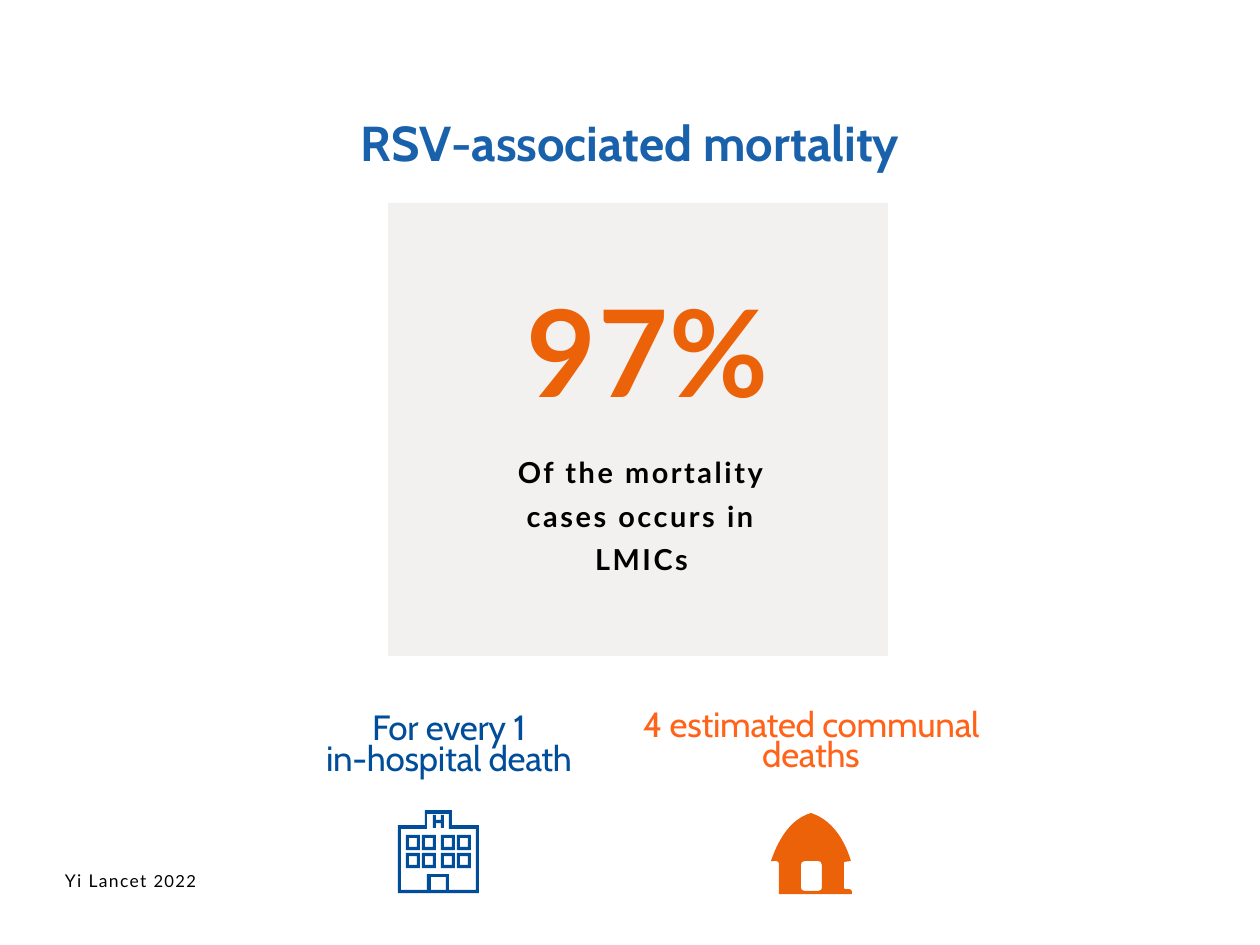
import pptx
import pptx.util
import pptx.dml.color
import pptx.enum.shapes
import pptx.enum.text
import pptx.oxml

SCALE = 914400 / 126  # EMU in one px
HUES = {
    "title": "1961AB", "panel": "D4D0CB", "ink": "000000",
    "rate": "EB6209", "home": "FF6319", "ward": "004D9A",
}
ALIGN = pptx.enum.text.PP_ALIGN
FIT = pptx.enum.text.MSO_AUTO_SIZE


def emu(px):
    return round(px * SCALE)


def hue(name):
    return pptx.dml.color.RGBColor.from_string(HUES[name])


def paint(shape, name):
    shape.shadow.inherit = False
    shape.fill.solid()
    shape.fill.fore_color.rgb = hue(name)
    shape.line.fill.background()


def place(shape, box):
    shape.left, shape.top, shape.width, shape.height = map(emu, box)


def write(shape, paras, font, size, color, bold=False, gap=0, lead=None,
          before=0, align=ALIGN.CENTER, inset=(0, 0), fit=FIT.NONE):
    """Fill a shape; each paragraph is a list of (text, size or None)."""
    frame = shape.text_frame
    frame.word_wrap = True
    frame.auto_size = fit
    frame.vertical_anchor = pptx.enum.text.MSO_ANCHOR.TOP
    frame.margin_left = frame.margin_right = emu(inset[0])
    frame.margin_top, frame.margin_bottom = emu(inset[1]), 0
    for i, runs in enumerate(paras):
        para = frame.add_paragraph() if i else frame.paragraphs[0]
        para.alignment = align
        if lead:
            para.line_spacing = pptx.util.Pt(lead)
        if i and before:
            para.space_before = pptx.util.Pt(before)
        for text, own in runs:
            run = para.add_run()
            run.text = text
            run.font.name, run.font.bold = font, bold
            run.font.size = pptx.util.Pt(own or size)
            run.font.color.rgb = hue(color)
            run._r.get_or_add_rPr().set("spc", str(round(gap * 100)))


def label(slide, box, paras, **form):
    write(slide.shapes.add_textbox(*map(emu, box)), paras, **form)


def panel(slide, box):
    shape = slide.shapes.add_shape(
        pptx.enum.shapes.MSO_SHAPE.RECTANGLE, *map(emu, box))
    paint(shape, "panel")
    color = shape.fill._xPr.find(".//" + pptx.oxml.ns.qn("a:srgbClr"))
    alpha = color.makeelement(pptx.oxml.ns.qn("a:alpha"), {"val": "28000"})
    color.append(alpha)


def icon(slide, rings, color):
    """Draw closed rings as one shape; inner rings are holes."""
    pen = None
    for ring in rings:
        dots = [(emu(x), emu(y)) for x, y in ring]
        if pen is None:
            pen = slide.shapes.build_freeform(*dots[0], scale=1.0)
        else:
            pen.move_to(*dots[0])
        pen.add_line_segments(dots[1:], close=True)
    paint(pen.convert_to_shape(), color)


def rect(x, y, w, h):
    return [(x, y), (x + w, y), (x + w, y + h), (x, y + h)]


def curve(a, b, c, d, steps=12):
    """Points along a cubic curve, without its start."""
    dots = []
    for i in range(1, steps + 1):
        t = i / steps
        s = 1 - t
        mix = (s ** 3, 3 * s * s * t, 3 * s * t * t, t ** 3)
        dots.append(tuple(sum(m * p[k] for m, p in zip(mix, (a, b, c, d)))
                          for k in (0, 1)))
    return dots


def ward(slide):
    outer = [(398, 825), (425, 825), (425, 810), (452, 810), (452, 825),
             (479, 825), (479, 893), (398, 893)]
    inner = [(401, 829), (427, 829), (427, 814), (449, 814), (449, 829),
             (476, 829), (476, 890), (449, 890), (449, 874), (427, 874),
             (427, 890), (401, 890)]
    sign = [(433, 815), (436, 815), (436, 820), (441, 820), (441, 815),
            (444, 815), (444, 828), (441, 828), (441, 823), (436, 823),
            (436, 828), (433, 828)]
    rings = [outer, inner, rect(431, 877, 15, 13), sign]
    for y in (835, 853):
        for x in (406, 422, 441, 457):
            rings += [rect(x, y, 14, 15), rect(x + 3, y + 3, 8, 9)]
    icon(slide, rings, "ward")


def hut(slide):
    east, peak, west = (851, 861), (811, 813), (771, 861)
    body = [east]
    body += curve(east, (844, 837), (830, 819), peak)
    body += curve(peak, (791, 819), (779, 838), west)
    body += curve(west, (774, 862), (776, 859), (779, 863))
    body += [(779, 894), (852, 894)]
    body += curve((852, 894), (853, 886), (845, 891), (844, 888))
    body += [(844, 862)]
    door = [(801, 865), (802, 862), (805, 861), (818, 861), (821, 862),
            (822, 865), (822, 888), (821, 890), (818, 891), (805, 891),
            (802, 890), (801, 888)]
    icon(slide, [body, door], "rate")


def main():
    deck = pptx.Presentation()
    deck.slide_width, deck.slide_height = emu(1260), emu(945)
    slide = deck.slides.add_slide(deck.slide_layouts[5])

    # Title
    title = slide.shapes.title
    place(title, (0, 106, 1260, 112))
    write(title, [[("RSV-associated mortality", None)]], font="Cabin",
          size=28, color="title", bold=True, inset=(13, 6))

    # Key figure
    panel(slide, (388, 203, 500, 453))
    label(slide, (527, 287, 280, 121), [[("97%", None)]], font="Lato",
          size=69, color="rate", bold=True, gap=0.8, lead=69,
          align=ALIGN.LEFT, inset=(0, 14))
    label(slide, (499, 442, 285, 87),
          [[("Of the mortality cases occurs in LMICs", None)]], font="Lato",
          size=16.5, color="ink", bold=True, gap=1.5, lead=24.8,
          inset=(0, 4))

    # Hospital and community deaths
    note = dict(font="Cabin", size=20, gap=-0.2, lead=17.3, before=0.8,
                inset=(0, 1), fit=FIT.SHAPE_TO_FIT_TEXT)
    label(slide, (323, 716, 252, 66),
          [[("For every 1", None)], [("in-hospital death", None)]],
          color="ward", **note)
    label(slide, (641, 713, 340, 64),
          [[("4 estimated communal deaths", None)]], color="home", **note)
    ward(slide)
    hut(slide)

    # Source
    label(slide, (65, 864, 362, 24), [[("Yi Lancet", None), (" 2022", 9.5)]],
          font="Lato", size=10, color="ink", gap=0.8, lead=13.7,
          align=ALIGN.LEFT, inset=(0, 3))

    deck.save("out.pptx")


if __name__ == "__main__":
    main()
